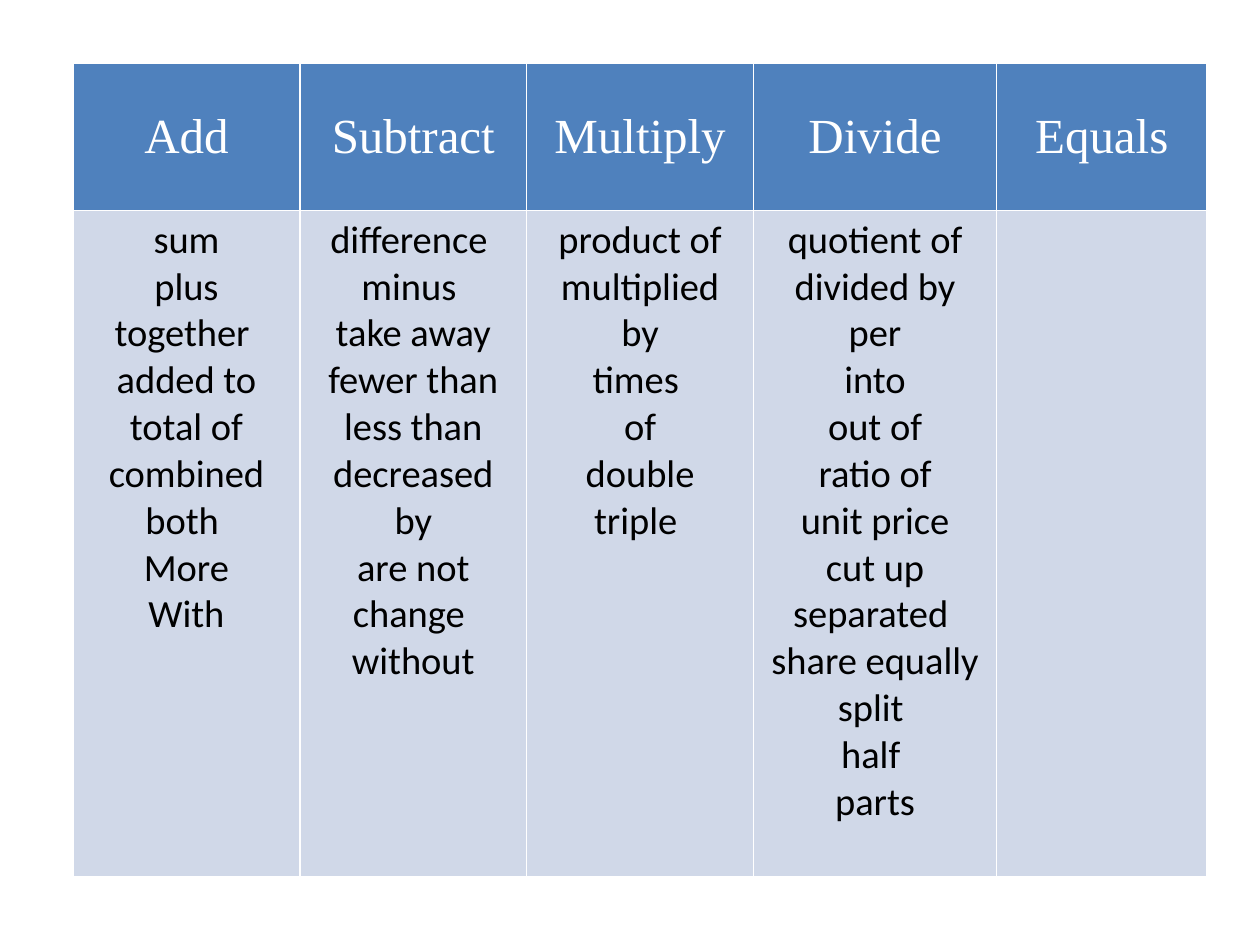
from lxml import etree
from pptx import Presentation
from pptx.dml.color import RGBColor
from pptx.enum.text import MSO_ANCHOR, PP_ALIGN
from pptx.oxml.ns import qn
from pptx.util import Inches, Pt

CENTER, MIDDLE, TOP = PP_ALIGN.CENTER, MSO_ANCHOR.MIDDLE, MSO_ANCHOR.TOP
WIDTH, HEIGHT = 10, 7.5
BLANK = 6
COLORS = {"head": "4F81BD", "body": "D0D8E8", "rule": "FFFFFF",
          "light": "FFFFFF", "dark": "000000"}
HEAD = {"fill": "head", "ink": "light", "anchor": MIDDLE,
        "font": {"name": "Times New Roman", "size": Pt(28), "bold": False}}
BODY = {"fill": "body", "ink": "dark", "anchor": TOP,
        "font": {"name": "Calibri", "size": Pt(22), "bold": False}}

WORDS = {
    "Add": ["sum", "plus", "together ", "added to", "total of", "combined",
            "both ", "More", "With"],
    "Subtract": ["difference ", "minus ", "take away", "fewer than",
                 "less than", "decreased by", "are not", "change ", "without"],
    "Multiply": ["product of", "multiplied by", "times ", "of", "double",
                 "triple "],
    "Divide": ["quotient of", "divided by", "per", "into", "out of",
               "ratio of", "unit price", "cut up", "separated ",
               "share equally", "split ", "half ", "parts"],
    "Equals": [],
}
COLS = [1.8, 1.8, 1.8, 1.93, 1.67]
ROWS = [1.17, 5.29]


class Deck:
    def __init__(self):
        self.file = Presentation()
        self.file.slide_width = Inches(WIDTH)
        self.file.slide_height = Inches(HEIGHT)
        self.slide = self.file.slides.add_slide(self.file.slide_layouts[BLANK])

    def border(self, cell, width=1):
        props = cell._tc.get_or_add_tcPr()
        for side in "LRTB":
            line = etree.SubElement(props, qn(f"a:ln{side}"), w=str(Pt(width)))
            fill = etree.SubElement(line, qn("a:solidFill"))
            etree.SubElement(fill, qn("a:srgbClr"), val=COLORS["rule"])

    def cell(self, cell, lines, style):
        self.border(cell)
        cell.fill.solid()
        cell.fill.fore_color.rgb = RGBColor.from_string(COLORS[style["fill"]])
        cell.vertical_anchor = style["anchor"]
        cell.text = "\n".join(lines)
        for para in cell.text_frame.paragraphs:
            para.alignment = CENTER
            for run in para.runs:
                for key, value in style["font"].items():
                    setattr(run.font, key, value)
                run.font.color.rgb = RGBColor.from_string(COLORS[style["ink"]])

    def table(self, left, top, cols, rows, words):
        """Draw one column per word list, with its key as the heading."""
        table = self.slide.shapes.add_table(
            len(rows), len(cols), Inches(left), Inches(top),
            Inches(sum(cols)), Inches(sum(rows))).table
        for col, width in zip(table.columns, cols):
            col.width = Inches(width)
        for row, height in zip(table.rows, rows):
            row.height = Inches(height)
        for i, (name, terms) in enumerate(words.items()):
            self.cell(table.cell(0, i), [name], HEAD)
            self.cell(table.cell(1, i), terms, BODY)


def main():
    deck = Deck()
    deck.table(0.58, 0.5, COLS, ROWS, WORDS)
    deck.file.save("out.pptx")


if __name__ == "__main__":
    main()
